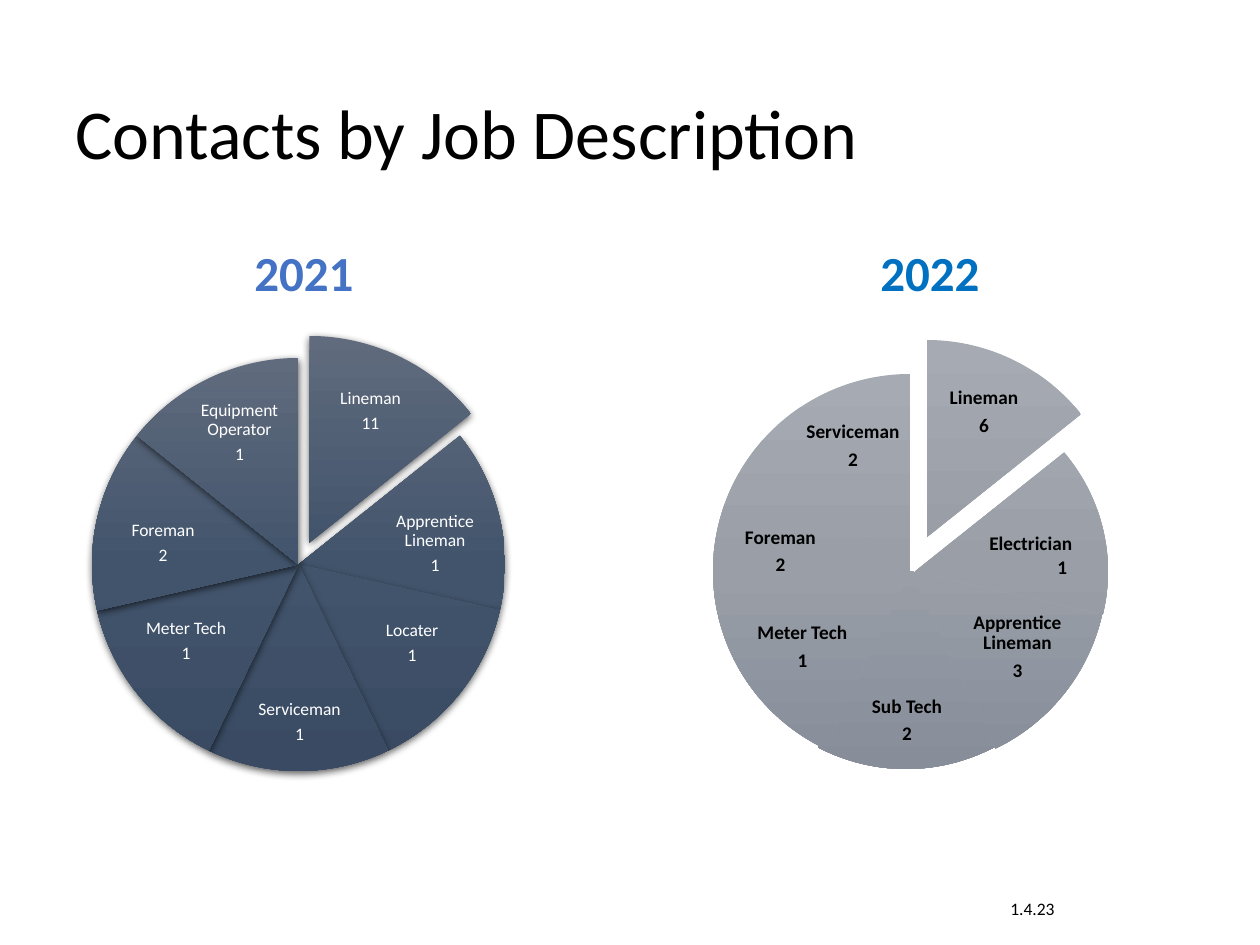
from lxml import etree
from pptx import Presentation
from pptx.dml.color import RGBColor
from pptx.enum.shapes import MSO_SHAPE
from pptx.enum.text import MSO_ANCHOR, PP_ALIGN
from pptx.oxml.ns import qn
from pptx.util import Emu, Pt

PX = 914400 / 126
PIE = MSO_SHAPE.PIE
LEFT, CENTER = PP_ALIGN.LEFT, PP_ALIGN.CENTER
TOP, MIDDLE = MSO_ANCHOR.TOP, MSO_ANCHOR.MIDDLE
FULL_TURN, FIRST_START = 216, 162

PIES = [
    {
        "colors": ("606B7D", "42546C", "394A62"),
        "shadow": True,
        "disc": (92, 358, 413, 413),
        "moved": {0: (103, 336, 413, 413)},
        "label": {"size": 10, "color": "FFFFFF", "inset": 1},
        "slices": [
            ("Lineman", "11", (314, 375, 113, 72)),
            ("Apprentice Lineman", "1", (375, 505, 120, 77)),
            ("Locater", "1", (358, 604, 108, 78)),
            ("Serviceman", "1", (244, 683, 111, 78)),
            ("Meter Tech", "1", (132, 602, 108, 78)),
            ("Foreman", "2", (103, 505, 120, 77)),
            ("Equipment Operator", "1", (183, 397, 113, 72)),
        ],
    },
    {
        "colors": ("A5AAB3", "999EA7", "878E9A"),
        "shadow": False,
        "disc": (713, 374, 394, 394),
        "moved": {
            0: (730, 340, 394, 394),
            1: (722, 384, 386, 375),
            3: (709, 359, 394, 410),
        },
        "label": {"size": 11, "color": "000000", "bold": True, "inset": 2},
        "slices": [
            ("Lineman", "6", (930, 378, 108, 68)),
            ("Electrician", "1", None),
            ("Apprentice Lineman", "3", (966, 609, 103, 76)),
            ("Sub Tech", "2", (854, 682, 106, 78)),
            ("Meter Tech", "1", (751, 609, 103, 76)),
            ("Foreman", "2", (723, 515, 115, 73)),
            ("Serviceman", "2", (799, 412, 108, 68)),
        ],
    },
]

TEXTS = [
    ("Contacts by Job Description", (63, 78, 1134, 118),
     {"size": 40, "anchor": MIDDLE, "spacing": 0.9}),
    ("2021", (242, 236, 126, 72),
     {"size": 28, "color": "4472C4", "bold": True, "wrap": False}),
    ("2022", (868, 236, 126, 72),
     {"size": 28, "color": "0070C0", "bold": True, "wrap": False}),
    ("Electrician", (977, 525, 136, 37), {"size": 11, "bold": True}),
    ("1", (1045, 549, 35, 37), {"size": 11, "bold": True, "wrap": False}),
    ("1.4.23", (998, 892, 242, 34), {"size": 10}),
]


def place(box):
    return [Emu(round(length * PX)) for length in box]


def rgb(value):
    return RGBColor.from_string(value)


def add_text(page, lines, box, size=10, color="000000", bold=False, align=LEFT,
             anchor=TOP, spacing=1.0, after=0, inset=None, wrap=True):
    frame = page.shapes.add_textbox(*place(box)).text_frame
    frame.word_wrap = wrap
    frame.vertical_anchor = anchor
    if inset is not None:
        margin = Emu(round(inset * PX))
        frame.margin_left = frame.margin_right = margin
        frame.margin_top = frame.margin_bottom = margin
    for index, line in enumerate(lines):
        para = frame.paragraphs[0] if index == 0 else frame.add_paragraph()
        para.alignment = align
        para.line_spacing = spacing
        para.space_after = Pt(after)
        span = para.add_run()
        span.text = line
        span.font.name = "Calibri"
        span.font.size = Pt(size)
        span.font.bold = bold
        span.font.color.rgb = rgb(color)


def add_color(parent, value):
    return etree.SubElement(parent, qn("a:srgbClr"), val=value)


def add_slice(page, box, start, end, colors, shadow):
    piece = page.shapes.add_shape(PIE, *place(box))
    piece.adjustments[0] = start
    piece.adjustments[1] = end
    piece.fill.gradient()
    piece.fill.gradient_angle = 270
    piece.line.fill.background()
    piece.shadow.inherit = False
    properties = piece.element.spPr
    stops = properties.find(qn("a:gradFill")).find(qn("a:gsLst"))
    for stop in list(stops):
        stops.remove(stop)
    for index, color in enumerate(colors):
        add_color(etree.SubElement(stops, qn("a:gs"), pos=str(index * 50000)), color)
    if shadow:
        effect = etree.SubElement(
            properties.find(qn("a:effectLst")), qn("a:outerShdw"),
            blurRad=str(Pt(4.5)), dist=str(Pt(1.5)), dir="5400000", rotWithShape="0")
        etree.SubElement(add_color(effect, "000000"), qn("a:alpha"), val="63000")


def add_pie(page, pie):
    step = FULL_TURN / len(pie["slices"])
    for index, (job, count, label_box) in enumerate(pie["slices"]):
        start = (FIRST_START + index * step) % FULL_TURN
        end = (start + step) % FULL_TURN
        add_slice(page, pie["moved"].get(index, pie["disc"]), start, end,
                  pie["colors"], pie["shadow"])
        if label_box:
            add_text(page, [job, count], label_box, align=CENTER, anchor=MIDDLE,
                     spacing=0.9, after=pie["label"]["size"] * 0.35, **pie["label"])


def main():
    deck = Presentation()
    deck.slide_width, deck.slide_height = place((1260, 945))
    page = deck.slides.add_slide(deck.slide_layouts[6])
    for pie in PIES:
        add_pie(page, pie)
    for text, box, style in TEXTS:
        add_text(page, [text], box, **style)
    deck.save("out.pptx")


if __name__ == "__main__":
    main()
